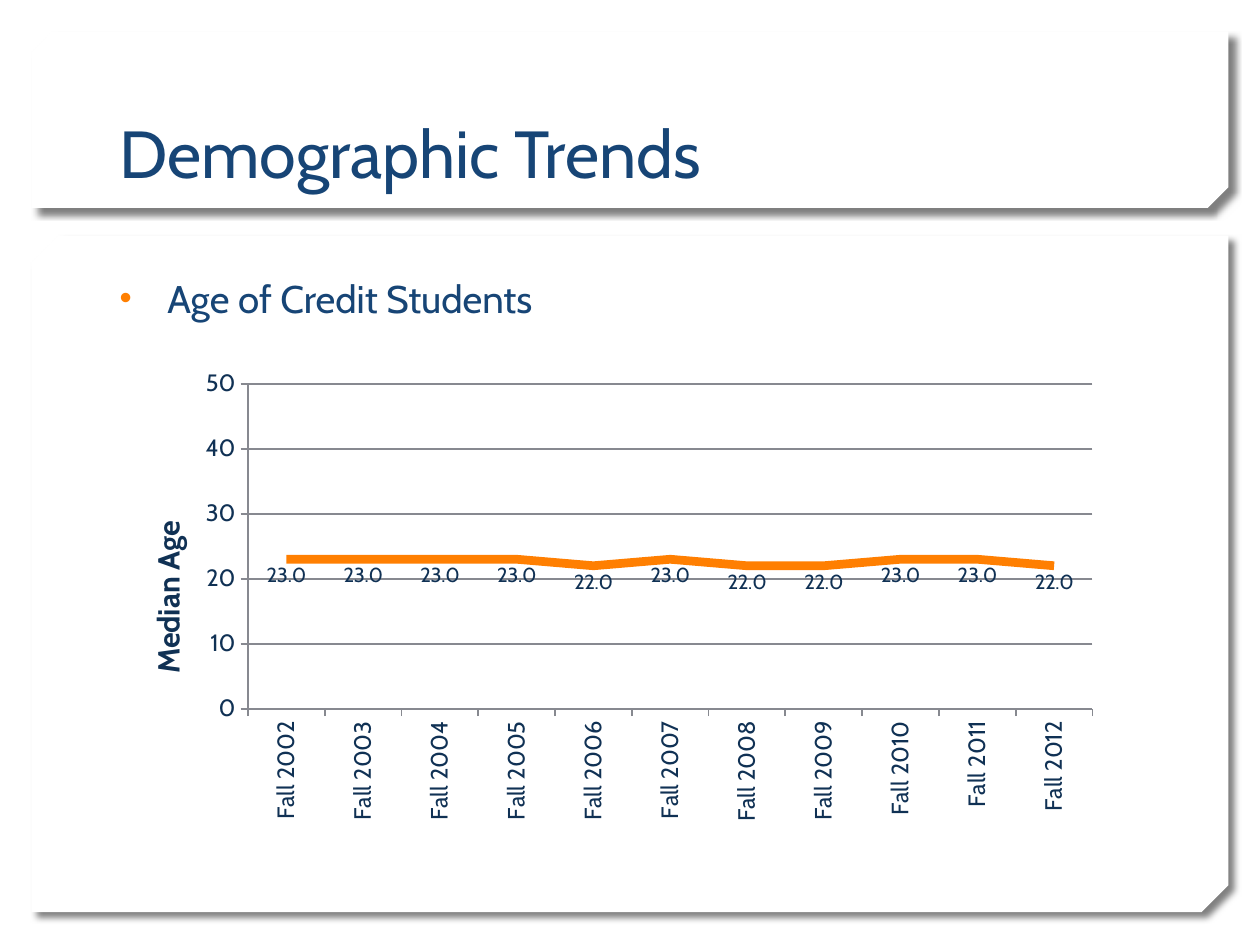
import lxml.etree
import pptx
import pptx.chart.data
import pptx.dml.color
import pptx.enum.chart
import pptx.enum.shapes
import pptx.enum.text
import pptx.oxml.ns
import pptx.util

RGBColor = pptx.dml.color.RGBColor
WHITE = RGBColor(0xFF, 0xFF, 0xFF)
BLUE = RGBColor(0x17, 0x45, 0x76)
NAVY = RGBColor(0x10, 0x31, 0x54)
ORANGE = RGBColor(0xFF, 0x7F, 0x01)
GREY = RGBColor(0x87, 0x89, 0x90)
FONT = "Cabin"
Inches = pptx.util.Inches
Pt = pptx.util.Pt


def add_element(parent, tag, **attributes):
    """Append a child such as a:buChar with the given attributes."""
    element = lxml.etree.SubElement(parent, pptx.oxml.ns.qn(tag))
    for name, value in attributes.items():
        element.set(name, str(value))
    return element


def fill_layout(layout, **values):
    """Give a chart part a manual position, in shares of the chart's size."""
    for child in list(layout):
        layout.remove(child)
    manual = add_element(layout, "c:manualLayout")
    for name, value in values.items():
        add_element(manual, "c:" + name, val=value)


presentation = pptx.Presentation()
presentation.slide_width = Inches(10)
presentation.slide_height = Inches(7.5)
slide = presentation.slides.add_slide(presentation.slide_layouts[6])

# Two white panels with cut corners and a shadow
for top, height, cut in ((1.87, 5.37, 0.04), (0.25, 1.4, 0.117)):
    panel = slide.shapes.add_shape(
        pptx.enum.shapes.MSO_SHAPE.SNIP_2_DIAG_RECTANGLE,
        Inches(0.25), Inches(top), Inches(9.5), Inches(height))
    panel.adjustments[0] = 0
    panel.adjustments[1] = cut
    panel.fill.solid()
    panel.fill.fore_color.rgb = WHITE
    panel.line.fill.background()
    panel.shadow.inherit = False
    properties = panel._element.spPr
    properties.xfrm.set("flipV", "1")
    effects = properties.find(pptx.oxml.ns.qn("a:effectLst"))
    shadow = add_element(effects, "a:outerShdw", blurRad=Pt(4), dist=Pt(5),
                         dir=45 * 60000, algn="tl", rotWithShape=0)
    color = add_element(shadow, "a:srgbClr", val="000000")
    add_element(color, "a:alpha", val=50000)

# Title and bullet
ANCHOR = pptx.enum.text.MSO_ANCHOR
paragraphs = []
for text, top, height, size, anchor in (
        ("Demographic Trends", 0.32, 1.25, 38, ANCHOR.BOTTOM),
        ("Age of Credit Students", 2.13, 4.38, 22, ANCHOR.TOP)):
    box = slide.shapes.add_textbox(
        Inches(0.85), Inches(top), Inches(8.29), Inches(height))
    box.text_frame.word_wrap = True
    box.text_frame.vertical_anchor = anchor
    paragraph = box.text_frame.paragraphs[0]
    paragraph.text = text
    paragraph.font.name = FONT
    paragraph.font.size = Pt(size)
    paragraph.font.color.rgb = BLUE
    paragraphs.append(paragraph)

bullet = paragraphs[1]
bullet.space_before = Pt(20)
bullet_properties = bullet._p.get_or_add_pPr()
bullet_properties.set("marL", str(Inches(0.38)))
bullet_properties.set("indent", str(-Inches(0.38)))
bullet_color = add_element(bullet_properties, "a:buClr")
add_element(bullet_color, "a:srgbClr", val=ORANGE)
add_element(bullet_properties, "a:buSzPct", val=90000)
add_element(bullet_properties, "a:buFont", typeface="Arial")
add_element(bullet_properties, "a:buChar", char="•")
# The schema wants the default run properties last
bullet_properties.append(bullet_properties.find(pptx.oxml.ns.qn("a:defRPr")))

# Line chart of median age
chart_data = pptx.chart.data.CategoryChartData(number_format="#,##0.0")
chart_data.categories = [f"Fall {year}" for year in range(2002, 2013)]
chart_data.add_series("Series 1", (23, 23, 23, 23, 22, 23, 22, 22, 23, 23, 22))
chart = slide.shapes.add_chart(
    pptx.enum.chart.XL_CHART_TYPE.LINE,
    Inches(0.59), Inches(2.85), Inches(8.89), Inches(4), chart_data).chart
chart.has_legend = False
chart.has_title = False
chart.font.name = FONT
chart.font.size = Pt(17.4)
chart.font.color.rgb = NAVY

plot = chart.plots[0]
plot.vary_by_categories = False
series = plot.series[0]
series.smooth = False
series.format.line.color.rgb = ORANGE
series.format.line.width = Pt(5)
series.marker.style = pptx.enum.chart.XL_MARKER_STYLE.NONE
labels = series.data_labels
labels.show_value = True
labels.position = pptx.enum.chart.XL_LABEL_POSITION.BELOW
labels.number_format = "#,##0.0"
labels.number_format_is_linked = False
labels.font.name = FONT
labels.font.size = Pt(11.6)
labels.font.color.rgb = NAVY

category_axis = chart.category_axis
value_axis = chart.value_axis
for axis in (category_axis, value_axis):
    axis.major_tick_mark = pptx.enum.chart.XL_TICK_MARK.OUTSIDE
    axis.format.line.color.rgb = GREY
    axis.format.line.width = Pt(1)
    axis.tick_labels.font.name = FONT
    axis.tick_labels.font.size = Pt(13.5)
    axis.tick_labels.font.color.rgb = NAVY
category_axis._element.txPr.bodyPr.set("rot", str(-90 * 60000))
category_axis._element.txPr.bodyPr.set("vert", "horz")

value_axis.minimum_scale = 0
value_axis.maximum_scale = 50
value_axis.major_unit = 10
value_axis.tick_labels.number_format = "#,##0"
value_axis.tick_labels.number_format_is_linked = False
value_axis.has_major_gridlines = True
value_axis.major_gridlines.format.line.color.rgb = GREY
value_axis.major_gridlines.format.line.width = Pt(1)

axis_title = value_axis.axis_title
title_frame = axis_title.text_frame
title_frame._txBody.bodyPr.set("rot", str(-90 * 60000))
title_frame._txBody.bodyPr.set("vert", "horz")
title_paragraph = title_frame.paragraphs[0]
title_paragraph.text = "Median Age"
title_paragraph.font.name = FONT
title_paragraph.font.size = Pt(17.4)
title_paragraph.font.bold = True
title_paragraph.font.color.rgb = NAVY
title_layout = axis_title._element.get_or_add_layout() if hasattr(
    axis_title._element, "get_or_add_layout") else axis_title._element.find(
    pptx.oxml.ns.qn("c:layout"))
fill_layout(title_layout, xMode="edge", yMode="edge", x=0.06, y=0.31)

plot_area = chart._chartSpace.chart.plotArea
plot_layout = plot_area.find(pptx.oxml.ns.qn("c:layout"))
if plot_layout is None:
    plot_layout = add_element(plot_area, "c:layout")
    plot_area.insert(0, plot_layout)
fill_layout(plot_layout, layoutTarget="inner", xMode="edge", yMode="edge",
            x=0.155, y=0.049, w=0.754, h=0.645)

presentation.save("out.pptx")
